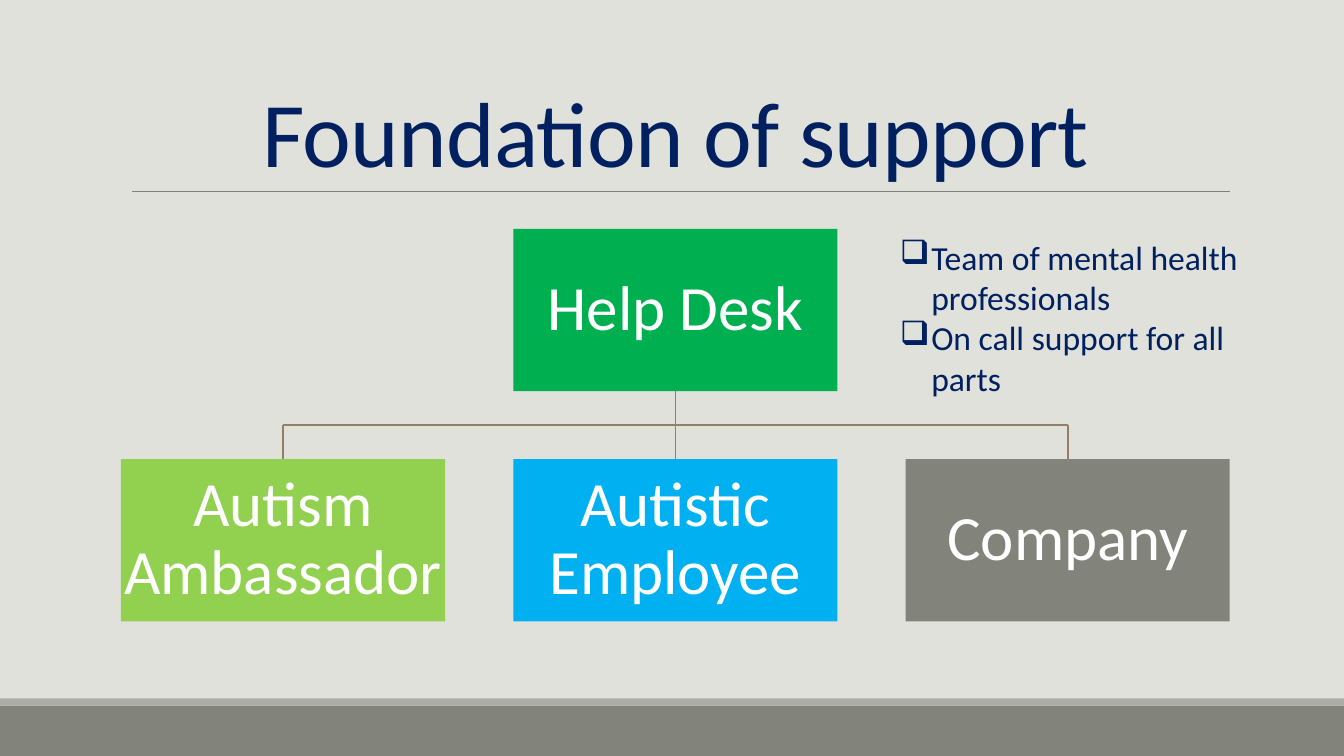
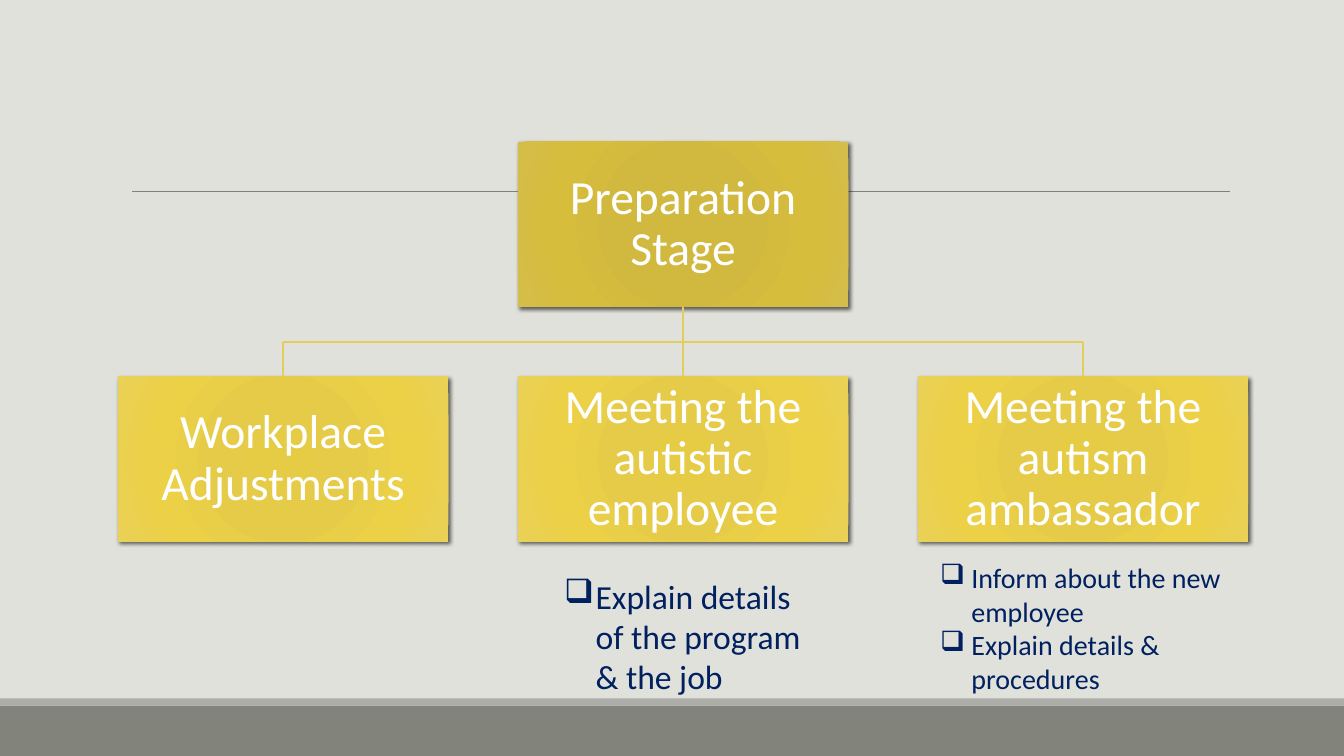
"""Build two slides that show support and preparation as small organisation charts."""
from typing import Any, NamedTuple

from lxml.etree import SubElement
from pptx import Presentation
from pptx.dml.color import RGBColor
from pptx.enum.shapes import MSO_CONNECTOR, MSO_SHAPE
from pptx.enum.text import MSO_ANCHOR, MSO_AUTO_SIZE, PP_ALIGN
from pptx.oxml.ns import qn
from pptx.shapes.autoshape import Shape
from pptx.shapes.connector import Connector
from pptx.slide import Slide
from pptx.util import Cm, Pt

BACKGROUND = RGBColor(0xE1, 0xE1, 0xDB)
STONE = RGBColor(0x82, 0x84, 0x7C)
LIGHT_STONE = RGBColor(0xAC, 0xAD, 0xA8)
RULE_GREY = RGBColor(0x80, 0x80, 0x80)
NAVY = RGBColor(0x00, 0x20, 0x60)
WHITE = RGBColor(0xFF, 0xFF, 0xFF)
BLACK = RGBColor(0x00, 0x00, 0x00)
GREEN = RGBColor(0x00, 0xB0, 0x50)
LIME = RGBColor(0x92, 0xD0, 0x50)
SKY = RGBColor(0x00, 0xB0, 0xF0)
BROWN = RGBColor(0x94, 0x7E, 0x64)
YELLOW = RGBColor(0xE3, 0xCD, 0x5E)
DARK_GOLD = (RGBColor(0xD1, 0xB8, 0x3B), RGBColor(0xD1, 0xB8, 0x3E),
             RGBColor(0xD7, 0xBD, 0x3C), RGBColor(0xD4, 0xBD, 0x4B))
GOLD = (RGBColor(0xE6, 0xCB, 0x45), RGBColor(0xE6, 0xCB, 0x49),
        RGBColor(0xEC, 0xD0, 0x46), RGBColor(0xEA, 0xD1, 0x57))
STOP_PERCENTS = (0, 34, 70, 100)

SLIDE_WIDTH, SLIDE_HEIGHT = 33.87, 19.05
PITCH_RATIO, DROP_RATIO = 1.21, 0.71
BULLET_INDENT = Cm(0.79)
FONT_NAME = "Calibri"

TITLE_FORMAT = {"word_wrap": True, "vertical_anchor": MSO_ANCHOR.BOTTOM}
NOTE_FORMAT = {"word_wrap": True, "auto_size": MSO_AUTO_SIZE.SHAPE_TO_FIT_TEXT}
BOX_FORMAT = {"word_wrap": True, "vertical_anchor": MSO_ANCHOR.MIDDLE} | dict.fromkeys(
    ("margin_left", "margin_top", "margin_right", "margin_bottom"), Cm(0.06))


class Area(NamedTuple):
    """Position and size in centimetres."""
    left: float
    top: float
    width: float
    height: float


class Box(NamedTuple):
    """A labelled box with a plain colour or gradient colours."""
    label: str
    fill: RGBColor | tuple[RGBColor, ...]


class Note(NamedTuple):
    """A bulleted list."""
    area: Area
    size: int
    lines: tuple[str, ...]


class Chart(NamedTuple):
    """One parent box above a row of child boxes."""
    left: float
    top: float
    box_width: float
    font_size: int
    line_color: RGBColor
    parent: Box
    children: tuple[Box, ...]


class Page(NamedTuple):
    """Content of one slide."""
    title: str
    chart: Chart
    notes: tuple[Note, ...]


PAGES = (
    Page(
        "Foundation of support",
        Chart(3.05, 5.77, 8.17, 45, BROWN, Box("Help Desk", GREEN), (
            Box("Autism Ambassador", LIME),
            Box("Autistic Employee", SKY),
            Box("Company", STONE))),
        (Note(Area(22.43, 5.84, 10.13, 4.37), 24, (
            "Team of mental health professionals",
            "On call support for all parts")),),
    ),
    Page(
        "",
        Chart(2.97, 3.57, 8.33, 34, YELLOW, Box("Preparation Stage", DARK_GOLD), (
            Box("Workplace Adjustments", GOLD),
            Box("Meeting the autistic employee", GOLD),
            Box("Meeting the autism ambassador", GOLD))),
        (Note(Area(13.97, 14.38, 7.09, 4.11), 24, (
            "Explain details of the program & the job",)),
         Note(Area(23.44, 14, 8.2, 3.68), 20, (
             "Inform about the new employee",
             "Explain details & procedures"))),
    ),
)


def apply_format(target: Any, values: dict[str, Any]) -> None:
    """Set every named attribute on the target."""
    for name, value in values.items():
        setattr(target, name, value)


def lengths(area: Area) -> tuple[Cm, ...]:
    """Convert an area to lengths."""
    return tuple(Cm(value) for value in area)


def write(paragraph: Any, text: str, size: int, color: RGBColor, **layout: Any) -> Any:
    """Fill a paragraph with one styled run and return the run."""
    apply_format(paragraph, layout)
    run = paragraph.add_run()
    run.text = text
    apply_format(run.font, {"name": FONT_NAME, "size": Pt(size)})
    run.font.color.rgb = color
    return run


def add_rectangle(slide: Slide, area: Area, color: RGBColor) -> Shape:
    """Draw a plain rectangle without outline or shadow."""
    shape = slide.shapes.add_shape(MSO_SHAPE.RECTANGLE, *lengths(area))
    shape.fill.solid()
    shape.fill.fore_color.rgb = color
    shape.line.fill.background()
    shape.shadow.inherit = False
    return shape


def add_line(slide: Slide, start: tuple[float, float], end: tuple[float, float],
             color: RGBColor, width: float) -> Connector:
    """Draw a straight line without shadow."""
    connector = slide.shapes.add_connector(
        MSO_CONNECTOR.STRAIGHT, *(Cm(value) for value in (*start, *end)))
    connector.line.color.rgb = color
    connector.line.width = Pt(width)
    SubElement(connector._element.spPr, qn("a:effectLst"))
    return connector


def add_glow_fill(shape: Shape, colors: tuple[RGBColor, ...]) -> None:
    """Give a rectangle a circular gradient and a soft shadow."""
    properties = shape._element.spPr
    gradient = SubElement(properties, qn("a:gradFill"), rotWithShape="1")
    stops = SubElement(gradient, qn("a:gsLst"))
    for percent, color in zip(STOP_PERCENTS, colors):
        stop = SubElement(stops, qn("a:gs"), pos=str(percent * 1000))
        SubElement(stop, qn("a:srgbClr"), val=str(color))
    circle = SubElement(gradient, qn("a:path"), {"path": "circle"})
    SubElement(circle, qn("a:fillToRect"), dict.fromkeys("ltrb", "100000"))
    properties.replace(properties.find(qn("a:solidFill")), gradient)
    shadow = SubElement(
        properties.find(qn("a:effectLst")), qn("a:outerShdw"), blurRad=str(Pt(3)),
        dist=str(Pt(2)), dir=str(45 * 60000), rotWithShape="0")
    shadow_color = SubElement(shadow, qn("a:srgbClr"), val=str(BLACK))
    SubElement(shadow_color, qn("a:alpha"), val="60000")


def add_box(slide: Slide, area: Area, box: Box, size: int) -> Shape:
    """Draw one labelled box of a chart."""
    is_plain = isinstance(box.fill, RGBColor)
    shape = add_rectangle(slide, area, box.fill if is_plain else box.fill[0])
    if not is_plain:
        add_glow_fill(shape, box.fill)
    apply_format(shape.text_frame, BOX_FORMAT)
    write(shape.text_frame.paragraphs[0], box.label, size, WHITE,
          alignment=PP_ALIGN.CENTER, line_spacing=0.9)
    return shape


def add_chart_tree(slide: Slide, chart: Chart) -> None:
    """Draw the parent, the row of children and the lines between them."""
    width, height = chart.box_width, chart.box_width / 2
    pitch = width * PITCH_RATIO
    child_top = chart.top + width * DROP_RATIO
    branch_y = (chart.top + height + child_top) / 2
    middle = len(chart.children) // 2
    centers = [chart.left + width / 2 + index * pitch
               for index in range(len(chart.children))]

    parent = add_box(slide, Area(chart.left + middle * pitch, chart.top, width, height),
                     chart.parent, chart.font_size)
    add_line(slide, (centers[0], branch_y), (centers[-1], branch_y),
             chart.line_color, 1.25)
    for index, (center, child) in enumerate(zip(centers, chart.children)):
        shape = add_box(slide, Area(center - width / 2, child_top, width, height),
                        child, chart.font_size)
        connector = add_line(slide, (center, branch_y), (center, child_top),
                             chart.line_color, 1.25)
        if index == middle:
            connector.begin_connect(parent, 2)
        connector.end_connect(shape, 0)


def add_title(slide: Slide, title: str) -> None:
    """Write the centred title above the rule."""
    text_frame = slide.shapes.add_textbox(
        *lengths(Area(3.05, 0.79, 27.94, 4.04))).text_frame
    apply_format(text_frame, TITLE_FORMAT)
    run = write(text_frame.paragraphs[0], title, 66, NAVY,
                alignment=PP_ALIGN.CENTER, line_spacing=0.85)
    run._r.get_or_add_rPr().set("spc", "-50")


def add_note(slide: Slide, note: Note) -> None:
    """Write a list with square bullets."""
    text_frame = slide.shapes.add_textbox(*lengths(note.area)).text_frame
    apply_format(text_frame, NOTE_FORMAT)
    for index, line in enumerate(note.lines):
        paragraph = text_frame.add_paragraph() if index else text_frame.paragraphs[0]
        write(paragraph, line, note.size, NAVY)
        properties = paragraph._p.get_or_add_pPr()
        properties.set("marL", str(BULLET_INDENT))
        properties.set("indent", str(-BULLET_INDENT))
        SubElement(properties, qn("a:buChar"), char="❑")


def add_frame(slide: Slide) -> None:
    """Draw the background, bottom bands and title rule."""
    slide.background.fill.solid()
    slide.background.fill.fore_color.rgb = BACKGROUND
    add_rectangle(slide, Area(0, 17.78, SLIDE_WIDTH, 1.27), STONE)
    add_rectangle(slide, Area(0, 17.6, SLIDE_WIDTH, 0.18), LIGHT_STONE)
    add_line(slide, (3.33, 4.82), (31, 4.82), RULE_GREY, 0.5)


def main() -> None:
    """Build and save the presentation."""
    presentation = Presentation()
    presentation.slide_width = Cm(SLIDE_WIDTH)
    presentation.slide_height = Cm(SLIDE_HEIGHT)
    for page in PAGES:
        slide = presentation.slides.add_slide(presentation.slide_layouts[6])
        add_frame(slide)
        if page.title:
            add_title(slide, page.title)
        add_chart_tree(slide, page.chart)
        for note in page.notes:
            add_note(slide, note)
    presentation.save("out.pptx")


if __name__ == "__main__":
    main()
